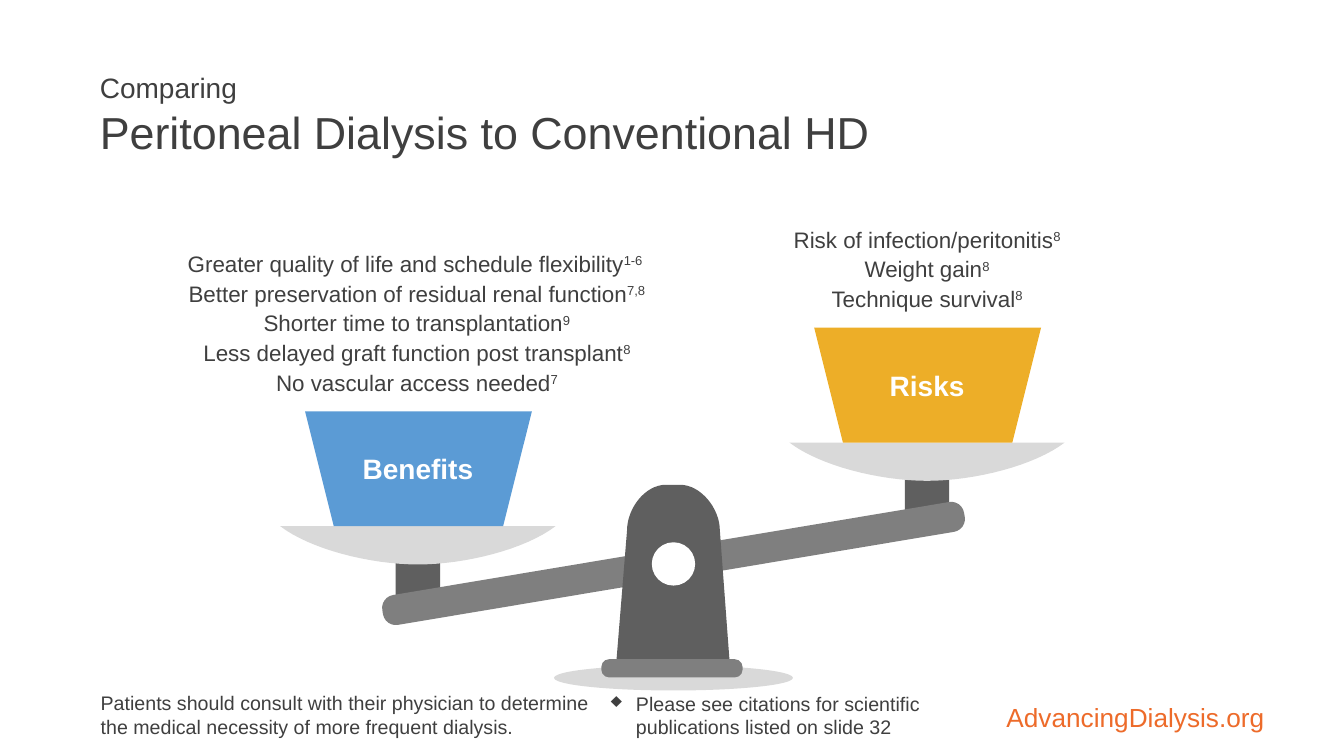
from pptx import Presentation
from pptx import util as u
from pptx.dml.color import RGBColor
from pptx.enum import shapes, text
from lxml import etree

PX = 9144
FONT = "Arial"
INK, WHITE, ORANGE = "3F3F3F", "FFFFFF", "ED6B2A"
DARK, MID, PALE = "5F5F5F", "7F7F7F", "D9D9D9"
BLUE, GOLD = "5B9BD5", "EDAE28"
SHAPE = shapes.MSO_SHAPE
ALIGN = text.PP_ALIGN
ANCHOR = text.MSO_ANCHOR

BENEFITS = [
    ("Greater quality of life and schedule flexibility", "1-6 "),
    ("Better preservation of residual renal function", "7,8"),
    ("Shorter time to transplantation", "9"),
    ("Less delayed graft function post transplant", "8"),
    ("No vascular access needed", "7"),
]
RISKS = [
    ("Risk of infection/peritonitis", "8"),
    ("Weight gain", "8"),
    ("Technique survival", "8"),
]


def colour(value):
    return RGBColor.from_string(value)


def px(*lengths):
    return [u.Emu(round(length * PX)) for length in lengths]


def paint(shape, fill):
    shape.shadow.inherit = False
    shape.fill.solid()
    shape.fill.fore_color.rgb = colour(fill)
    shape.line.fill.background()


def add_preset(page, kind, box, fill, rotation=0, rounding=None):
    shape = page.shapes.add_shape(kind, *px(*box))
    paint(shape, fill)
    shape.rotation = rotation
    if rounding is not None:
        shape.adjustments[0] = rounding


def add_outline(page, points, fill):
    builder = page.shapes.build_freeform(*px(*points[0]))
    builder.add_line_segments([px(*point) for point in points[1:]], close=True)
    paint(builder.convert_to_shape(), fill)


def curve(start, pull_start, pull_end, end, steps=16):
    points = []
    for step in range(steps + 1):
        t = step / steps
        weights = ((1 - t) ** 3, 3 * t * (1 - t) ** 2, 3 * t * t * (1 - t), t ** 3)
        controls = (start, pull_start, pull_end, end)
        points.append(tuple(sum(w * c[axis] for w, c in zip(weights, controls))
                            for axis in (0, 1)))
    return points


def add_frame(page, box, anchor=ANCHOR.TOP, insets=(10, 5)):
    frame = page.shapes.add_textbox(*px(*box)).text_frame
    frame.word_wrap = True
    frame.vertical_anchor = anchor
    frame.margin_left = frame.margin_right = px(insets[0])[0]
    frame.margin_top = frame.margin_bottom = px(insets[1])[0]
    return frame


def style(para, size, ink=INK, bold=False, align=ALIGN.LEFT):
    para.alignment = align
    font = para.font
    font.name, font.size, font.bold = FONT, u.Pt(size), bold
    font.color.rgb = colour(ink)


def add_title(page, box):
    para = add_frame(page, box, ANCHOR.MIDDLE, (7, 4)).paragraphs[0]
    style(para, 32)
    topic = para.add_run()
    topic.text = "Comparing "
    topic.font.size = u.Pt(20)
    para.add_line_break()
    para.add_run().text = "Peritoneal Dialysis to Conventional HD"


def add_points(page, box, points):
    frame = add_frame(page, box, insets=(0, 0))
    for index, (point, citation) in enumerate(points):
        para = frame.add_paragraph() if index else frame.paragraphs[0]
        style(para, 16, align=ALIGN.CENTER)
        para.line_spacing = 0.9
        para.space_after = u.Pt(4)
        para.add_run().text = point
        mark = para.add_run()
        mark.text = citation
        mark._r.get_or_add_rPr().set("baseline", "30000")


def add_pan(page, box, fill):
    left, top, width, height = box
    right, middle, bottom = left + width, left + width / 2, top + height
    add_preset(page, SHAPE.RECTANGLE, (middle - 22, top + 25, 44, 48), DARK)
    bowl = curve((left, top), (left + 30, top + 23), (middle - 47, bottom), (middle, bottom))
    bowl += curve((middle, bottom), (middle + 47, bottom), (right - 30, top + 23), (right, top))
    add_outline(page, bowl, PALE)
    add_preset(page, SHAPE.TRAPEZOID, (middle - 112, top - 114, 225, 114), fill, 180)


def add_pan_label(page, box, label):
    left, top, width, _ = box
    para = add_frame(page, (left + width / 2 - 82, top - 79, 164, 44),
                     ANCHOR.MIDDLE).paragraphs[0]
    style(para, 20, WHITE, True, ALIGN.CENTER)
    para.text = label


def add_stand(page, box):
    left, top, width, height = box
    right, bottom, middle = left + width, top + height, left + width / 2
    shoulder = top + 45
    add_preset(page, SHAPE.ROUNDED_RECTANGLE, (middle - 292, top + 63, 585, 30),
               MID, -9.5, 0.43)
    add_preset(page, SHAPE.OVAL, (middle - 118, bottom - 1, 237, 25), PALE)
    pillar = [(left, bottom)]
    pillar += curve((left + 11, shoulder), (left + 11, top + 24),
                    (middle - 28, top), (middle - 7, top))
    pillar += curve((middle + 7, top), (middle + 28, top),
                    (right - 10, top + 24), (right - 10, shoulder))
    add_outline(page, pillar + [(right, bottom)], DARK)
    add_preset(page, SHAPE.OVAL, (middle - 21, top + 57, 43, 43), WHITE)
    add_preset(page, SHAPE.ROUNDED_RECTANGLE, (middle - 71, bottom - 7, 140, 18),
               MID, rounding=0.42)


def add_footer(page, box):
    left, top, _, height = box
    advice = add_frame(page, (left, top, 506, height)).paragraphs[0]
    style(advice, 14)
    advice.text = ("Patients should consult with their physician to determine "
                   "the medical necessity of more frequent dialysis.")

    sources = add_frame(page, (left + 506, top, 354, height), ANCHOR.MIDDLE).paragraphs[0]
    properties = sources._p.get_or_add_pPr()
    properties.set("marL", str(25 * PX))
    properties.set("indent", str(-25 * PX))
    namespace = properties.nsmap["a"]
    bullet = etree.SubElement(properties, f"{{{namespace}}}buChar")
    bullet.set("char", "♦")
    style(sources, 14)
    sources.text = "Please see citations for scientific publications listed on slide 32"

    site = add_frame(page, (left + 722, top - 15, 453, 61), ANCHOR.BOTTOM, (11, 0)).paragraphs[0]
    style(site, 18.7, ORANGE, align=ALIGN.RIGHT)
    site.line_spacing = 0.9
    site.text = "AdvancingDialysis.org"


def main():
    deck = Presentation()
    deck.slide_width, deck.slide_height = px(1333, 750)
    page = deck.slides.add_slide(deck.slide_layouts[6])
    sides = [
        ("Benefits", BLUE, (278, 522, 273, 38), (181, 251, 465, 163), BENEFITS),
        ("Risks", GOLD, (783, 439, 273, 38), (736, 227, 367, 102), RISKS),
    ]
    for label, fill, pan, notes, points in sides:
        add_points(page, notes, points)
        add_pan(page, pan, fill)
        add_pan_label(page, pan, label)
    add_stand(page, (611, 481, 113, 180))
    add_title(page, (92, 82, 1150, 63))
    add_footer(page, (90, 681, 1175, 57))
    deck.save("out.pptx")


if __name__ == "__main__":
    main()
